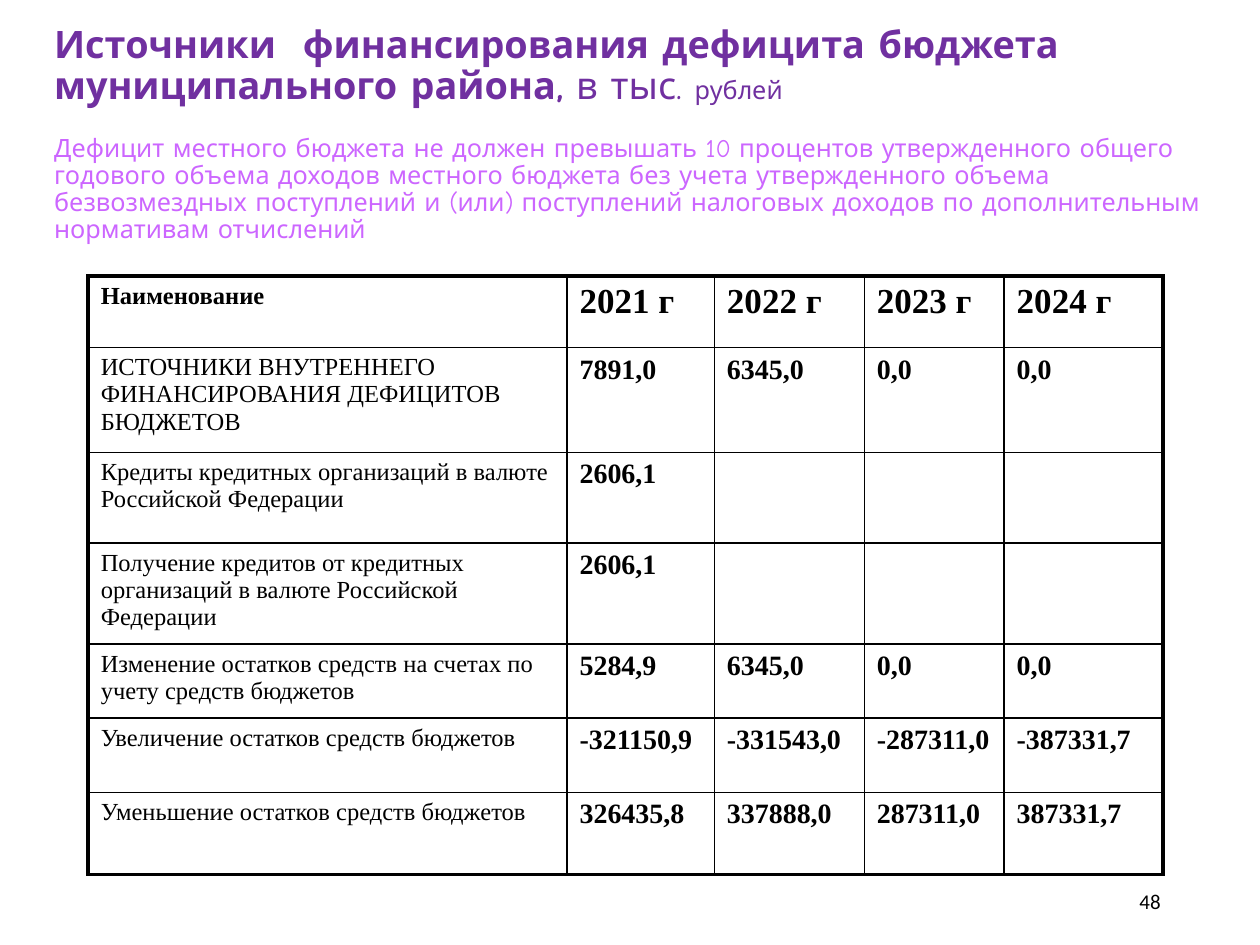
from lxml.etree import SubElement
from pptx import Presentation
from pptx.dml.color import RGBColor
from pptx.enum.text import MSO_ANCHOR as Anchor, MSO_AUTO_SIZE as AutoSize, PP_ALIGN as Align
from pptx.oxml.ns import qn
from pptx.util import Inches, Pt

COLORS = {"heading": "7030A0", "note": "CC66FF", "ink": "000000"}
COLUMNS = [3.8, 1.17, 1.19, 1.11, 1.26]
ROWS = [0.57, 0.83, 0.72, 0.74, 0.59, 0.59, 0.65]
THIN, THICK = 1, 2.25
FINANCING = [
    ["Наименование", "2021 г", "2022 г", "2023 г", "2024 г"],
    ["ИСТОЧНИКИ ВНУТРЕННЕГО ФИНАНСИРОВАНИЯ ДЕФИЦИТОВ БЮДЖЕТОВ", "7891,0", "6345,0", "0,0", "0,0"],
    ["Кредиты кредитных организаций в валюте Российской Федерации", "2606,1", "", "", ""],
    ["Получение кредитов от кредитных организаций в валюте Российской Федерации", "2606,1", "", "", ""],
    ["Изменение остатков средств на счетах по учету средств бюджетов", "5284,9", "6345,0", "0,0", "0,0"],
    ["Увеличение остатков средств бюджетов", "-321150,9", "-331543,0", "-287311,0", "-387331,7"],
    ["Уменьшение остатков средств бюджетов", "326435,8", "337888,0", "287311,0", "387331,7"],
]


def style(font, name, size, color, bold=False):
    font.name = name
    font.size = Pt(size)
    font.bold = bold
    font.color.rgb = RGBColor.from_string(COLORS[color])


def add_border(cell, side, width):
    line = SubElement(cell._tc.get_or_add_tcPr(), qn(f"a:ln{side}"), w=str(Pt(width)))
    fill = SubElement(line, qn("a:solidFill"))
    SubElement(fill, qn("a:srgbClr"), val=COLORS["ink"])


deck = Presentation()
deck.slide_width, deck.slide_height = Inches(10), Inches(7.5)
width, height = deck.slide_width, deck.slide_height
page = deck.slides.add_slide(deck.slide_layouts[5])

title = page.shapes.title
title.left, title.top = int(width * 0.033), int(height * 0.067)
title.width, title.height = int(width * 0.95), int(height * 0.152)
frame = title.text_frame
frame.word_wrap = True
frame.auto_size = AutoSize.NONE
frame.vertical_anchor = Anchor.MIDDLE

heading = frame.paragraphs[0]
for text, size, bold in [
    ("Источники  финансирования дефицита бюджета муниципального района,", 21.6, True),
    (" в тыс. ", 21.6, False),
    ("рублей", 14.4, False),
]:
    span = heading.add_run()
    span.text = text
    style(span.font, "Comic Neue", size, "heading", bold)

note = frame.add_paragraph()
note.text = (
    "Дефицит местного бюджета не должен превышать 10 процентов утвержденного общего "
    "годового объема доходов местного бюджета без учета утвержденного объема "
    "безвозмездных поступлений и (или) поступлений налоговых доходов по дополнительным "
    "нормативам отчислений"
)
note.space_before = Pt(16)
style(note.runs[0].font, "Comic Neue", 14.4, "note")
for para in frame.paragraphs:
    para.alignment = Align.LEFT
    para.line_spacing = 0.9

box = page.shapes.add_textbox(
    int(width * 0.706), int(height * 0.927), int(width * 0.225), int(height * 0.053)
)
box.text_frame.word_wrap = True
box.text_frame.vertical_anchor = Anchor.MIDDLE
box.text_frame.text = "48"
number = box.text_frame.paragraphs[0]
number.alignment = Align.RIGHT
style(number.runs[0].font, "Calibri", 12, "ink")

table = page.shapes.add_table(
    len(ROWS), len(COLUMNS), int(width * 0.07), int(height * 0.292),
    Inches(sum(COLUMNS)), Inches(sum(ROWS))
).table
table.first_row = False
table.horz_banding = False
for column, size in zip(table.columns, COLUMNS):
    column.width = Inches(size)
for row, size in zip(table.rows, ROWS):
    row.height = Inches(size)

last_row, last_column = len(ROWS) - 1, len(COLUMNS) - 1
for i, values in enumerate(FINANCING):
    for j, value in enumerate(values):
        cell = table.cell(i, j)
        cell.text = value
        para = cell.text_frame.paragraphs[0]
        size = 14 if j == 0 else 20 if i == 0 else 16
        for font in [para.font] + [span.font for span in para.runs]:
            style(font, "Times New Roman", size, "ink", i == 0 or j > 0)
        edges = {"L": j == 0, "R": j == last_column, "T": i == 0, "B": i == last_row}
        for side, outer in edges.items():
            add_border(cell, side, THICK if outer else THIN)
        cell.fill.background()

deck.save("out.pptx")
